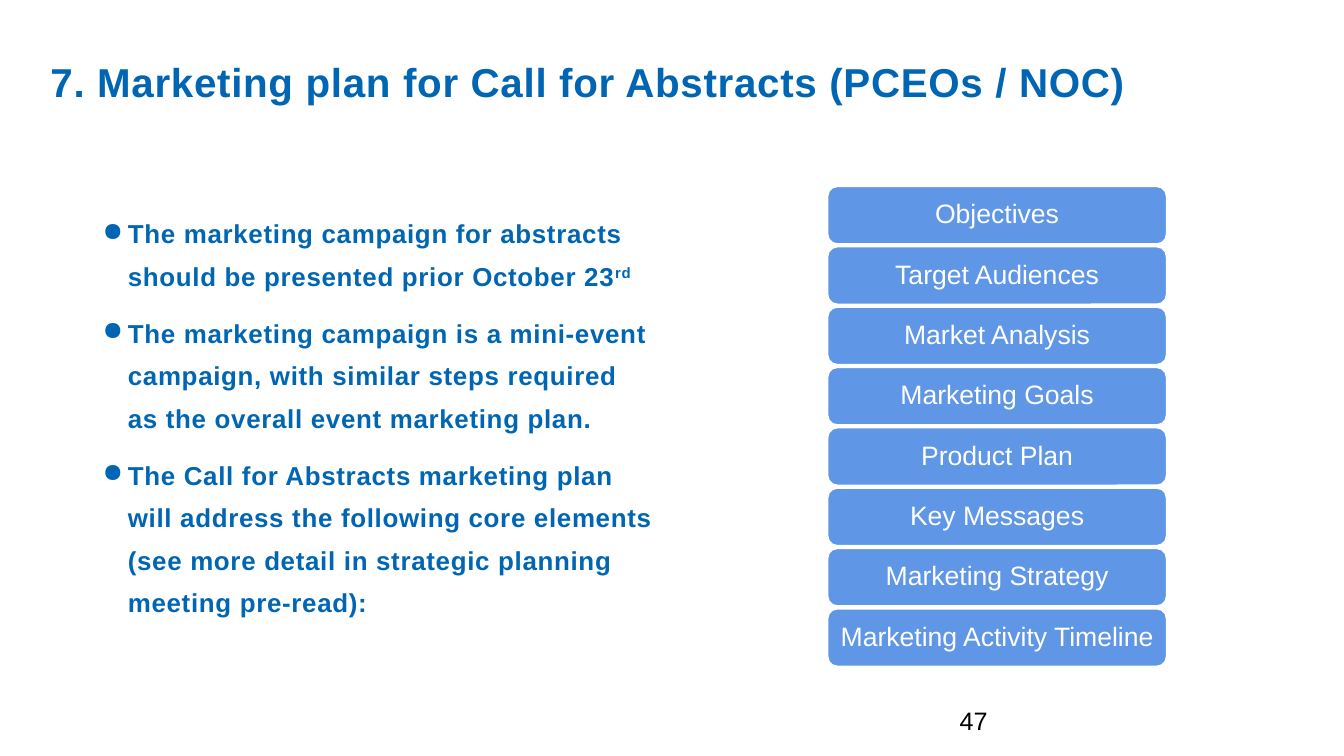
from pptx import Presentation
from pptx.dml.color import RGBColor
from pptx.enum.shapes import MSO_SHAPE as Shape
from pptx.enum.text import MSO_ANCHOR as Anchor, PP_ALIGN as Align
from pptx.oxml.xmlchemy import OxmlElement as Node
from pptx.util import Inches, Pt

BLUE, SKY, WHITE, BLACK = "0066B3", "6096E6", "FFFFFF", "000000"
TITLE = "7. Marketing plan for Call for Abstracts (PCEOs / NOC)"
POINTS = [
    [("The marketing campaign for abstracts should be presented prior October 23", 0),
     ("rd", 30000)],
    [("The marketing campaign is a mini-event campaign, with similar steps required "
      "as the overall event marketing plan.", 0)],
    [("The Call for Abstracts marketing plan will address the following core elements "
      "(see more detail in strategic planning meeting pre-read):", 0)],
]
STEPS = ["Objectives", "Target Audiences", "Market Analysis", "Marketing Goals",
         "Product Plan", "Key Messages", "Marketing Strategy",
         "Marketing Activity Timeline"]


def paint(code):
    return RGBColor.from_string(code)


def write(para, text, size, color, bold=False, gap=0, base=0):
    run = para.add_run()
    run.text = text
    font = run.font
    font.name, font.size, font.bold = "Arial", Pt(size), bold
    font.color.rgb = paint(color)
    props = run._r.get_or_add_rPr()
    if gap:
        props.set("spc", str(gap))
    if base:
        props.set("baseline", str(base))


def bullet(para):
    props = para._p.get_or_add_pPr()
    props.set("marL", str(Inches(0.25)))
    props.set("indent", str(-Inches(0.25)))
    mark = Node("a:buChar")
    mark.set("char", "●")
    props.append(mark)


def heading(slide, left, top, width, height):
    title = slide.shapes.title
    title.left, title.top = Inches(left), Inches(top)
    title.width, title.height = Inches(width), Inches(height)
    frame = title.text_frame
    frame.vertical_anchor = Anchor.MIDDLE
    para = frame.paragraphs[0]
    para.alignment = Align.LEFT
    write(para, TITLE, 28.8, BLUE, True, 50)


def points(slide, left, top, width, height):
    box = slide.shapes.add_textbox(Inches(left), Inches(top), Inches(width), Inches(height))
    frame = box.text_frame
    frame.word_wrap = True
    for i, parts in enumerate(POINTS):
        para = frame.add_paragraph() if i else frame.paragraphs[0]
        bullet(para)
        para.line_spacing = 1.37
        para.space_after = Pt(10)
        for text, base in parts:
            write(para, text, 18.5, BLUE, True, 50, base)


def stack(slide, left, top, width, height):
    tall = 0.57
    pitch = (height - tall) / (len(STEPS) - 1)
    for i, text in enumerate(STEPS):
        step = slide.shapes.add_shape(
            Shape.ROUNDED_RECTANGLE, Inches(left), Inches(top + i * pitch),
            Inches(width), Inches(tall))
        step.shadow.inherit = False
        step.fill.solid()
        step.fill.fore_color.rgb = paint(SKY)
        step.line.color.rgb = paint(WHITE)
        step.line.width = Pt(1)
        frame = step.text_frame
        frame.word_wrap = True
        frame.vertical_anchor = Anchor.MIDDLE
        frame.margin_left = frame.margin_right = Inches(0.08)
        frame.margin_top = frame.margin_bottom = Inches(0.04)
        para = frame.paragraphs[0]
        para.alignment = Align.CENTER
        para.line_spacing = 0.9
        write(para, text, 19, WHITE)


def number(slide, left, top, width, height):
    box = slide.shapes.add_textbox(Inches(left), Inches(top), Inches(width), Inches(height))
    write(box.text_frame.paragraphs[0], "47", 18, BLACK)


def main():
    deck = Presentation()
    deck.slide_width, deck.slide_height = Inches(13.33), Inches(7.5)
    slide = deck.slides.add_slide(deck.slide_layouts[5])
    heading(slide, 0.4, 0.42, 12, 0.77)
    points(slide, 0.92, 2, 5.67, 4.76)
    stack(slide, 8.21, 1.85, 3.36, 4.76)
    number(slide, 9.42, 6.95, 3, 0.4)
    deck.save("out.pptx")


if __name__ == "__main__":
    main()
